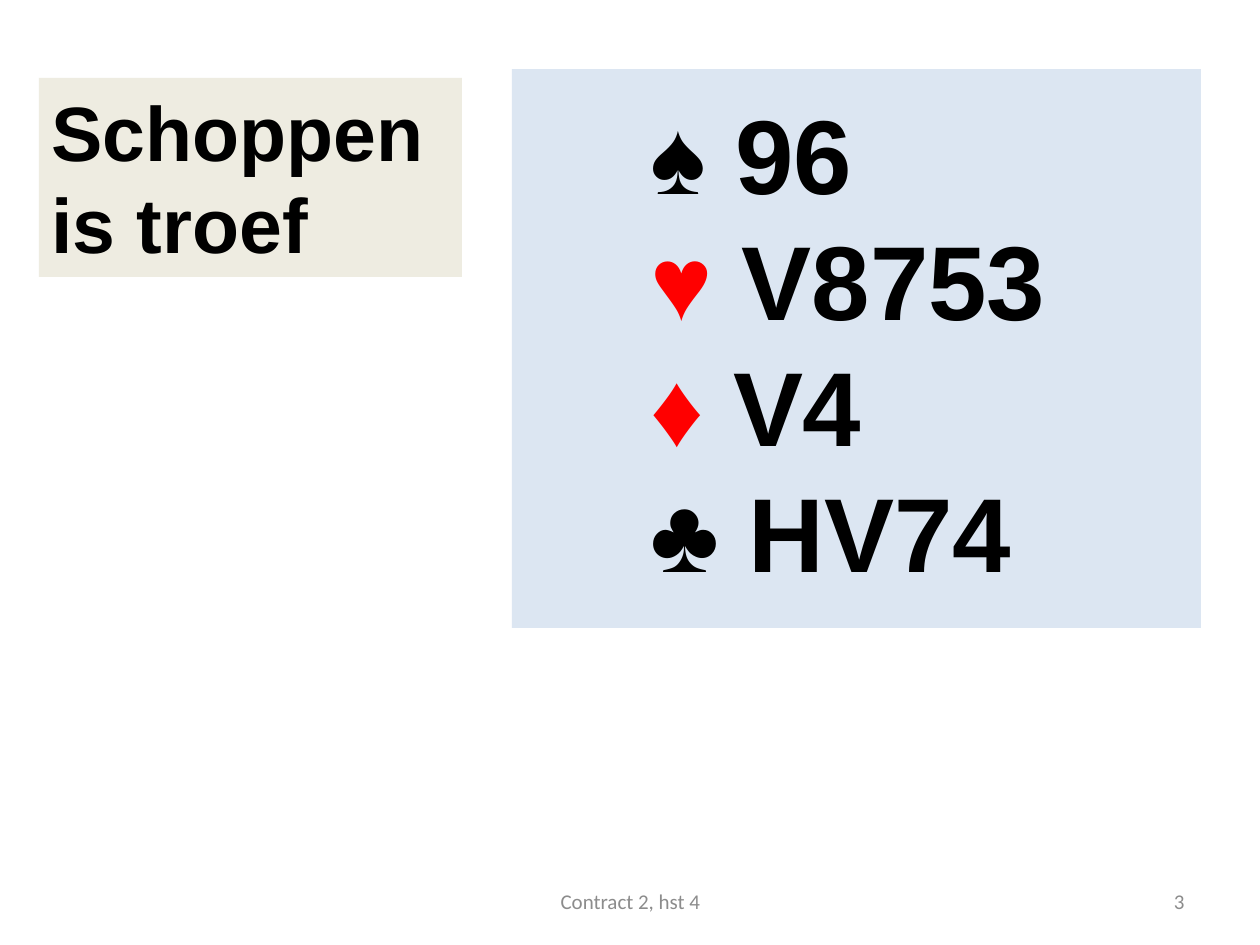
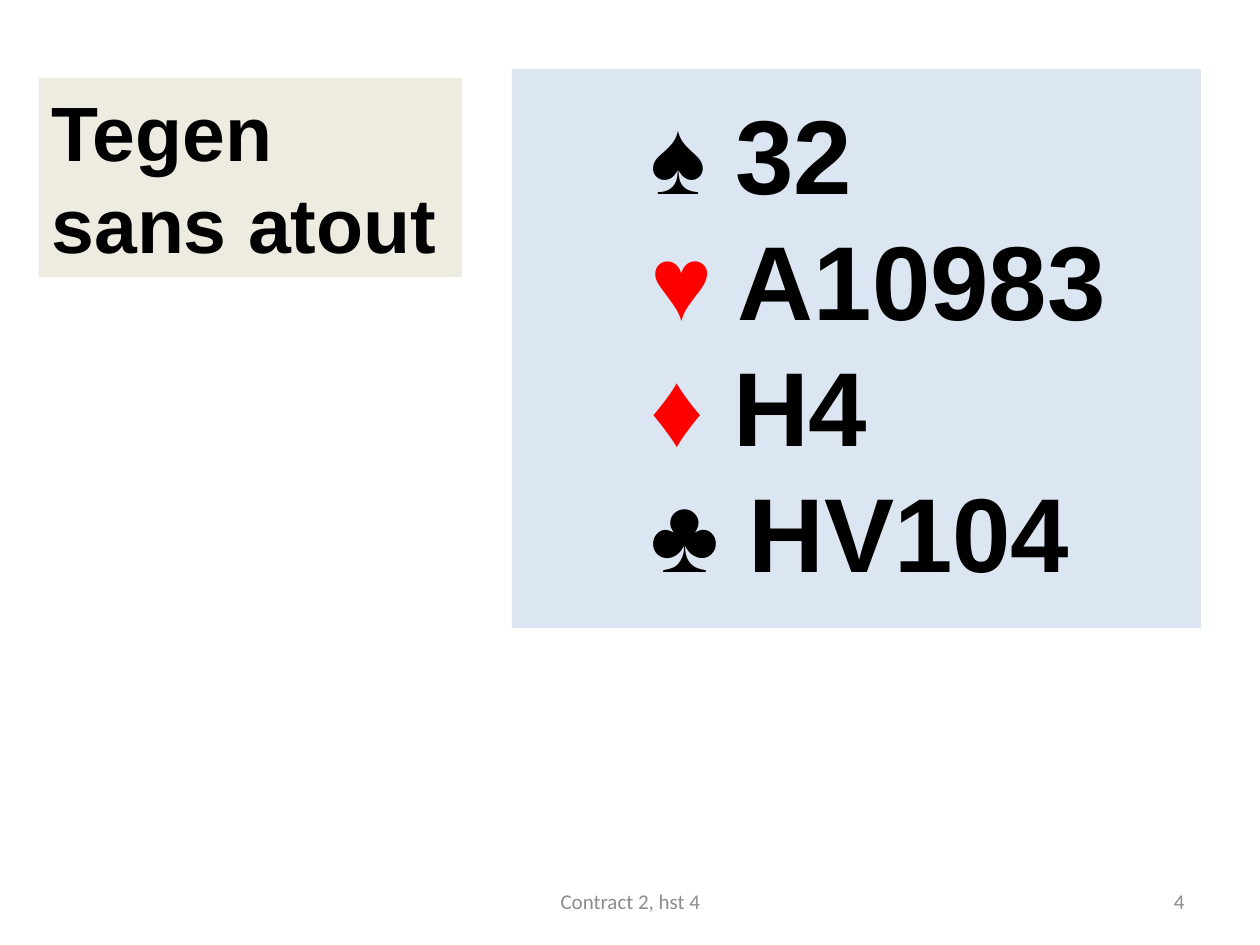
from pptx import Presentation
from pptx.dml.color import RGBColor
from pptx.enum.shapes import MSO_SHAPE
from pptx.enum.text import MSO_ANCHOR, MSO_AUTO_SIZE, PP_ALIGN
from pptx.util import Emu, Pt

# Shared scale, colours and wording
PX_PER_INCH = 126
COLORS = {
    "hand": "DCE6F2",
    "title": "EEECE1",
    "black": "000000",
    "red": "FF0000",
    "footer": "8C8C8C",
}
SUITS = [("♠", "black"), ("♥", "red"), ("♦", "red"), ("♣", "black")]
FOOTER = "Contract 2, hst 4"
FIRST_NUMBER = 3
DEALS = [
    ("Schoppen is troef", ["96", "V8753", "V4", "HV74"]),
    ("Tegen sans atout", ["32", "A10983", "H4", "HV104"]),
]


def px(n):
    return Emu(round(n * 914400 / PX_PER_INCH))


def color(name):
    return RGBColor.from_string(COLORS[name])


def add_run(p, text, size, fill, font="Arial", bold=True):
    r = p.add_run()
    r.text = text
    r.font.name = font
    r.font.size = Pt(size)
    r.font.bold = bold
    r.font.color.rgb = color(fill)


def add_panel(s, box, fill):
    """Plain filled rectangle with left-aligned text from the top."""
    sp = s.shapes.add_shape(MSO_SHAPE.RECTANGLE, *map(px, box))
    sp.shadow.inherit = False
    sp.fill.solid()
    sp.fill.fore_color.rgb = color(fill)
    sp.line.fill.background()
    tf = sp.text_frame
    tf.word_wrap = True
    tf.auto_size = MSO_AUTO_SIZE.SHAPE_TO_FIT_TEXT
    tf.vertical_anchor = MSO_ANCHOR.TOP
    return tf


def add_hand(s, holdings):
    tf = add_panel(s, (512, 69, 689, 559), "hand")
    tf.margin_top, tf.margin_bottom = px(20), px(30)
    for i, ((suit, fill), cards) in enumerate(zip(SUITS, holdings)):
        p = tf.add_paragraph() if i else tf.paragraphs[0]
        p.alignment = PP_ALIGN.LEFT
        p_pr = p._p.get_or_add_pPr()
        p_pr.set("marL", str(px(126)))
        p_pr.set("indent", "0")
        add_run(p, suit, 60, fill)
        add_run(p, f" {cards}", 60, "black")


def add_title(s, text):
    p = add_panel(s, (39, 78, 423, 199), "title").paragraphs[0]
    p.alignment = PP_ALIGN.LEFT
    add_run(p, text, 44, "black")


def add_footer_text(s, left, width, text, align):
    tf = s.shapes.add_textbox(px(left), px(876), px(width), px(50)).text_frame
    tf.word_wrap = True
    tf.vertical_anchor = MSO_ANCHOR.MIDDLE
    p = tf.paragraphs[0]
    p.alignment = align
    add_run(p, text, 12, "footer", "Calibri", False)


def main():
    prs = Presentation()
    prs.slide_width, prs.slide_height = px(1260), px(945)
    blank = prs.slide_layouts[6]

    # One slide per deal
    for number, (title, holdings) in enumerate(DEALS, FIRST_NUMBER):
        s = prs.slides.add_slide(blank)
        add_hand(s, holdings)
        add_title(s, title)
        add_footer_text(s, 903, 294, str(number), PP_ALIGN.RIGHT)
        add_footer_text(s, 431, 399, FOOTER, PP_ALIGN.CENTER)

    prs.save("out.pptx")


if __name__ == "__main__":
    main()
